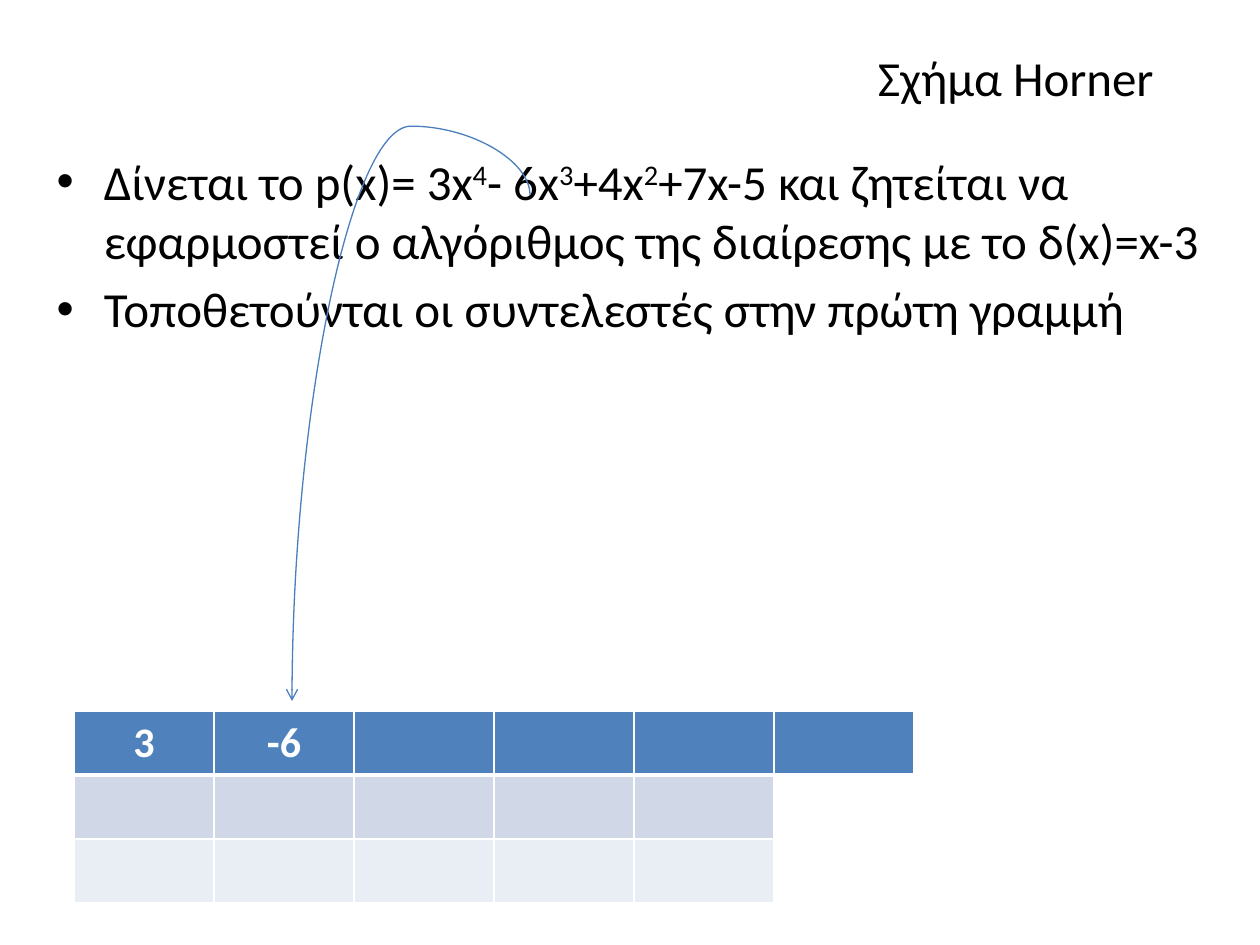
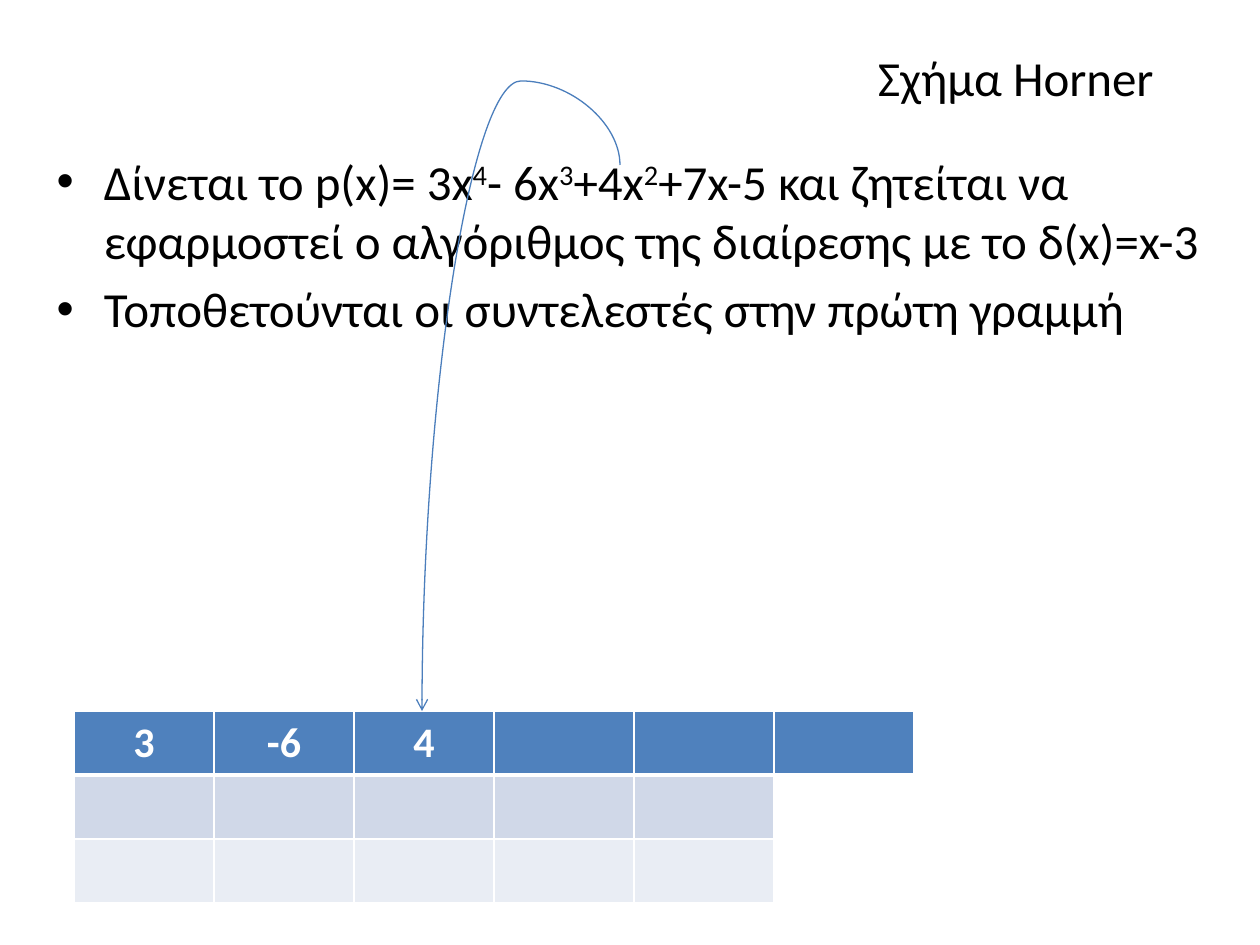
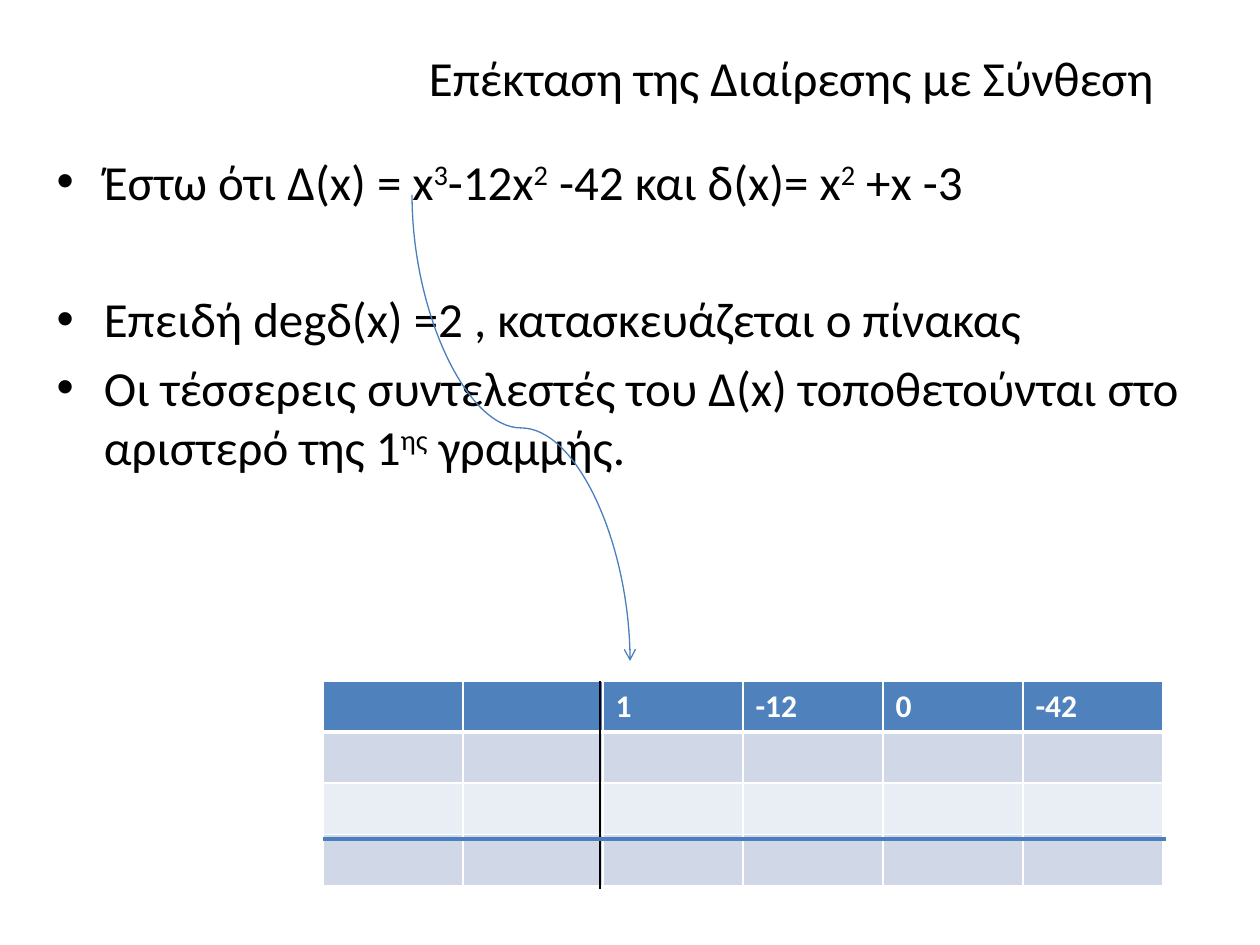
from dataclasses import dataclass

from lxml.etree import SubElement
from pptx import Presentation
from pptx.dml.color import RGBColor
from pptx.enum.shapes import MSO_CONNECTOR as Connector
from pptx.enum.text import MSO_AUTO_SIZE as AutoSize, PP_ALIGN as Align
from pptx.oxml.ns import qn
from pptx.util import Emu, Pt

PX_PER_INCH = 126
BLACK, WHITE = "000000", "FFFFFF"
HEADER_FILL, LINE_BLUE = "4F81BD", "4B7EBC"
BAND_FILLS = ("D0D8E8", "E9EDF4")
COLUMN_WIDTH = 140
COLUMN_COUNT = 6
TITLE_BOX = (95, 37, 1071, 79)
BODY_BOX = (44, 145, 1171, 556)
TEXT_FORMAT = {"name": "Calibri", "size": Pt(28), "bold": False}
EXTRA_GAP = Pt(45)


@dataclass
class Bullet:
    """A list item; parts between ^ marks are superscript."""
    text: str
    gap_before: bool = False


@dataclass
class Grid:
    left: int
    top: int
    row_height: int
    header: tuple[str, ...]
    body_rows: int
    filled_columns: int
    font_size: int
    align: Align


@dataclass
class Curve:
    """An arrow that leaves vertically and turns at height turn_y."""
    start: tuple[int, int]
    end: tuple[int, int]
    turn_y: int


@dataclass
class Rule:
    start: tuple[int, int]
    end: tuple[int, int]
    color: str
    width: float


@dataclass
class SlideContent:
    title: str
    bullets: tuple[Bullet, ...]
    grid: Grid
    curve: Curve
    rules: tuple[Rule, ...] = ()


def px(length: float) -> Emu:
    return Emu(round(length * 914400 / PX_PER_INCH))


def rgb(value: str) -> RGBColor:
    return RGBColor.from_string(value)


def format_font(font, color: str, **changes) -> None:
    for name, value in {**TEXT_FORMAT, **changes}.items():
        setattr(font, name, value)
    font.color.rgb = rgb(color)


def place(shape, box: tuple[int, int, int, int]) -> None:
    for name, value in zip(("left", "top", "width", "height"), box):
        setattr(shape, name, px(value))


def add_runs(paragraph, text: str) -> None:
    for index, part in enumerate(text.split("^")):
        run = paragraph.add_run()
        run.text = part
        format_font(run.font, BLACK)
        if index % 2:
            run._r.get_or_add_rPr().set("baseline", "30000")


def fill_title(slide, text: str) -> None:
    title = slide.shapes.title
    place(title, TITLE_BOX)
    title.text_frame.auto_size = AutoSize.NONE
    paragraph = title.text_frame.paragraphs[0]
    paragraph.alignment = Align.RIGHT
    add_runs(paragraph, text)


def fill_body(slide, bullets: tuple[Bullet, ...]) -> None:
    body = slide.placeholders[1]
    place(body, BODY_BOX)
    frame = body.text_frame
    frame.auto_size = AutoSize.NONE
    for index, bullet in enumerate(bullets):
        paragraph = frame.add_paragraph() if index else frame.paragraphs[0]
        add_runs(paragraph, bullet.text)
        if bullet.gap_before:
            paragraph.space_before = EXTRA_GAP


def set_borders(cell, bottom_width: int) -> None:
    properties = cell._tc.get_or_add_tcPr()
    widths = {"a:lnL": 1, "a:lnR": 1, "a:lnT": 1, "a:lnB": bottom_width}
    for tag, width in widths.items():
        line = SubElement(properties, qn(tag), w=str(Pt(width)))
        fill = SubElement(line, qn("a:solidFill"))
        SubElement(fill, qn("a:srgbClr"), val=WHITE)


def add_grid(slide, grid: Grid) -> None:
    row_count = grid.body_rows + 1
    table = slide.shapes.add_table(
        row_count, COLUMN_COUNT, px(grid.left), px(grid.top),
        px(COLUMN_WIDTH * COLUMN_COUNT), px(grid.row_height * row_count),
    ).table
    for column in table.columns:
        column.width = px(COLUMN_WIDTH)
    for row_index, row in enumerate(table.rows):
        row.height = px(grid.row_height)
        is_header = row_index == 0
        for column_index, cell in enumerate(row.cells):
            set_borders(cell, 3 if is_header else 1)
            if is_header or column_index < grid.filled_columns:
                cell.fill.solid()
                band = BAND_FILLS[(row_index - 1) % 2]
                cell.fill.fore_color.rgb = rgb(HEADER_FILL if is_header else band)
            else:
                cell.fill.background()
    for cell, text in zip(table.rows[0].cells, grid.header):
        if text:
            paragraph = cell.text_frame.paragraphs[0]
            paragraph.alignment = grid.align
            run = paragraph.add_run()
            run.text = text
            format_font(run.font, WHITE, size=Pt(grid.font_size), bold=True)


def add_line(slide, kind: Connector, start: tuple[float, float],
             end: tuple[float, float], color: str, width: float):
    connector = slide.shapes.add_connector(kind, *map(px, (*start, *end)))
    connector.line.color.rgb = rgb(color)
    connector.line.width = Pt(width)
    SubElement(connector._element.spPr, qn("a:effectLst"))
    return connector


def add_curve(slide, curve: Curve) -> None:
    """Draw a horizontal connector, then turn it by a quarter to run downwards."""
    (start_x, start_y), (end_x, end_y) = curve.start, curve.end
    center_x, center_y = (start_x + end_x) / 2, (start_y + end_y) / 2
    drop, spread = end_y - start_y, abs(end_x - start_x)
    direction = 1 if end_x < start_x else -1
    reach = direction * drop / 2
    connector = add_line(
        slide, Connector.CURVE,
        (center_x - reach, center_y - spread / 2),
        (center_x + reach, center_y + spread / 2), LINE_BLUE, 0.75)
    properties = connector._element.spPr
    properties.find(qn("a:xfrm")).set("rot", str(direction * 90 % 360 * 60000))
    adjustments = properties.find(qn("a:prstGeom")).find(qn("a:avLst"))
    turn = round((curve.turn_y - start_y) / drop * 100000)
    SubElement(adjustments, qn("a:gd"), name="adj1", fmla=f"val {turn}")
    SubElement(properties.find(qn("a:ln")), qn("a:tailEnd"), type="arrow")


def add_content_slide(presentation, content: SlideContent) -> None:
    slide = presentation.slides.add_slide(presentation.slide_layouts[1])
    fill_title(slide, content.title)
    fill_body(slide, content.bullets)
    add_grid(slide, content.grid)
    add_curve(slide, content.curve)
    for rule in content.rules:
        add_line(slide, Connector.STRAIGHT, rule.start, rule.end, rule.color, rule.width)


def horner_slide(coefficients: tuple[str, ...], curve: Curve) -> SlideContent:
    bullets = (
        Bullet("Δίνεται το p(x)= 3x^4^- 6x^3^+4x^2^+7x-5 και ζητείται να "
               "εφαρμοστεί ο αλγόριθμος της διαίρεσης με το δ(x)=x-3"),
        Bullet("Τοποθετούνται οι συντελεστές στην πρώτη γραμμή"),
    )
    grid = Grid(74, 711, 64, coefficients, body_rows=2, filled_columns=5,
                font_size=24, align=Align.CENTER)
    return SlideContent("Σχήμα Horner", bullets, grid, curve)


SLIDES = (
    horner_slide(("3", "-6"), Curve((530, 195), (292, 701), turn_y=126)),
    horner_slide(("3", "-6", "4"), Curve((620, 165), (422, 711), turn_y=81)),
    SlideContent(
        "Επέκταση της Διαίρεσης με Σύνθεση",
        (
            Bullet("Έστω ότι Δ(x) = x^3^-12x^2^ -42 και δ(x)= x^2^ +x -3"),
            Bullet("Επειδή degδ(x) =2 , κατασκευάζεται ο πίνακας", gap_before=True),
            Bullet("Οι τέσσερεις συντελεστές του Δ(x) τοποθετούνται στο "
                   "αριστερό της 1^ης^ γραμμής."),
        ),
        Grid(323, 681, 51, ("", "", "1", "-12", "0", "-42"), body_rows=3,
             filled_columns=6, font_size=18, align=Align.LEFT),
        Curve((412, 195), (630, 661), turn_y=428),
        (
            Rule((600, 681), (600, 889), BLACK, 0.75),
            Rule((323, 839), (1166, 839), LINE_BLUE, 2),
        ),
    ),
)


def main() -> None:
    presentation = Presentation()
    presentation.slide_width = px(1260)
    presentation.slide_height = px(945)
    for content in SLIDES:
        add_content_slide(presentation, content)
    presentation.save("out.pptx")


if __name__ == "__main__":
    main()
